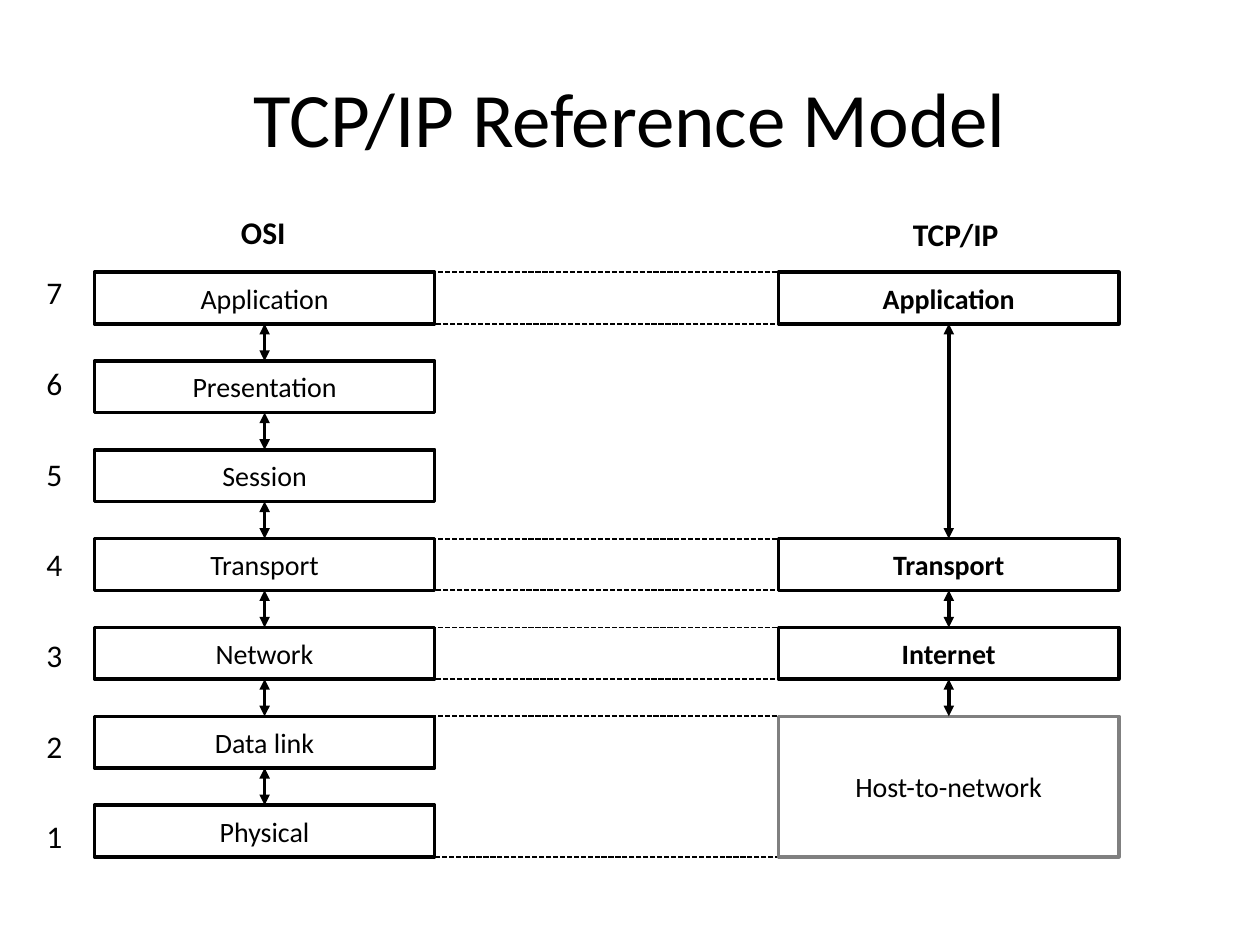
from lxml.etree import SubElement
from pptx import Presentation
from pptx.dml.color import RGBColor
from pptx.enum.dml import MSO_LINE
from pptx.enum.shapes import MSO_CONNECTOR, MSO_SHAPE
from pptx.enum.text import MSO_ANCHOR, PP_ALIGN
from pptx.oxml.ns import qn
from pptx.util import Inches, Pt

BLACK, GRAY, WHITE = "000000", "808080", "FFFFFF"
OSI_LAYERS = ["Application", "Presentation", "Session", "Transport",
              "Network", "Data link", "Physical"]
# name, first row, last row, bold, outline
TCP_LAYERS = [("Application", 0, 0, True, BLACK),
              ("Transport", 3, 3, True, BLACK),
              ("Internet", 4, 4, True, BLACK),
              ("Host-to-network", 5, 6, False, GRAY)]
OSI_LEFT, TCP_LEFT, LAYER_WIDTH = 0.75, 6.18, 2.7
FIRST_TOP, ROW_PITCH, LAYER_HEIGHT = 2.16, 0.705, 0.41


def row_top(row):
    return FIRST_TOP + row * ROW_PITCH


def row_bottom(row):
    return row_top(row) + LAYER_HEIGHT


def middle(left):
    return left + LAYER_WIDTH / 2


def rgb(color):
    return RGBColor.from_string(color)


def write(frame, *lines, size=16, bold=False, color=BLACK,
          align=PP_ALIGN.CENTER, anchor=MSO_ANCHOR.MIDDLE, wrap=True,
          line_spacing=None, gap=None):
    """Put one paragraph per line into the frame, with gap points after each."""
    frame.word_wrap = wrap
    frame.vertical_anchor = anchor
    for number, line in enumerate(lines):
        paragraph = frame.add_paragraph() if number else frame.paragraphs[0]
        paragraph.alignment = align
        if line_spacing:
            paragraph.line_spacing = line_spacing
        if gap:
            paragraph.space_after = Pt(gap)
        run = paragraph.add_run()
        run.text = line
        run.font.name = "Calibri"
        run.font.size = Pt(size)
        run.font.bold = bold
        run.font.color.rgb = rgb(color)


def add_block(slide, left, width, first_row, last_row, outline=BLACK,
              weight=2, dash=None):
    """Add a square-cornered block that spans the given rows."""
    top = row_top(first_row)
    block = slide.shapes.add_shape(
        MSO_SHAPE.ROUNDED_RECTANGLE, Inches(left), Inches(top),
        Inches(width), Inches(row_bottom(last_row) - top))
    block.adjustments[0] = 0
    block.shadow.inherit = False
    block.fill.solid()
    block.fill.fore_color.rgb = rgb(WHITE)
    block.line.color.rgb = rgb(outline)
    block.line.width = Pt(weight)
    if dash:
        block.line.dash_style = dash
    return block


def add_layer(slide, name, left, first_row, last_row, bold=False,
              outline=BLACK):
    layer = add_block(slide, left, LAYER_WIDTH, first_row, last_row, outline)
    write(layer.text_frame, name, bold=bold)


def add_double_arrow(slide, x, upper_row, lower_row):
    arrow = slide.shapes.add_connector(
        MSO_CONNECTOR.STRAIGHT, Inches(x), Inches(row_bottom(upper_row)),
        Inches(x), Inches(row_top(lower_row)))
    arrow.line.color.rgb = rgb(BLACK)
    arrow.line.width = Pt(2)
    outline = arrow.line._get_or_add_ln()
    for end in ("a:headEnd", "a:tailEnd"):
        SubElement(outline, qn(end), type="triangle")
    SubElement(outline.getparent(), qn("a:effectLst"))


def add_label(slide, left, top, width, height, *lines, **text_format):
    label = slide.shapes.add_textbox(
        Inches(left), Inches(top), Inches(width), Inches(height))
    write(label.text_frame, *lines, size=18, anchor=MSO_ANCHOR.TOP,
          **text_format)


def add_title(slide, text):
    title = slide.shapes.title
    title.left, title.top = Inches(0.5), Inches(0.3)
    title.width, title.height = Inches(9), Inches(1.25)
    write(title.text_frame, text, size=44)


def add_matching_bands(slide):
    """Tie each TCP/IP layer to its OSI rows with a dashed band."""
    left = middle(OSI_LEFT)
    width = middle(TCP_LEFT) - left
    for _, first_row, last_row, _, _ in TCP_LAYERS:
        add_block(slide, left, width, first_row, last_row,
                  weight=1, dash=MSO_LINE.SQUARE_DOT)


def add_osi_stack(slide):
    for row, name in enumerate(OSI_LAYERS):
        add_layer(slide, name, OSI_LEFT, row, row)
    for row in range(len(OSI_LAYERS) - 1):
        add_double_arrow(slide, middle(OSI_LEFT), row, row + 1)
    numbers = [str(number) for number in range(len(OSI_LAYERS), 0, -1)]
    add_label(slide, 0.27, 2.06, 0.61, 4.82, *numbers,
              align=PP_ALIGN.LEFT, line_spacing=1.2, gap=25.9)
    add_label(slide, 1.81, 1.64, 0.56, 0.4, "OSI", bold=True, wrap=False)


def add_tcp_stack(slide):
    add_label(slide, 7.13, 1.66, 0.91, 0.4, "TCP/IP", bold=True, wrap=False)
    for name, first_row, last_row, bold, outline in TCP_LAYERS:
        add_layer(slide, name, TCP_LEFT, first_row, last_row, bold, outline)
    for upper, lower in zip(TCP_LAYERS, TCP_LAYERS[1:]):
        add_double_arrow(slide, middle(TCP_LEFT), upper[2], lower[1])


def main():
    presentation = Presentation()
    presentation.slide_width = Inches(10)
    presentation.slide_height = Inches(7.5)
    slide = presentation.slides.add_slide(presentation.slide_layouts[5])
    add_matching_bands(slide)
    add_title(slide, "TCP/IP Reference Model")
    add_osi_stack(slide)
    add_tcp_stack(slide)
    presentation.save("out.pptx")


if __name__ == "__main__":
    main()
